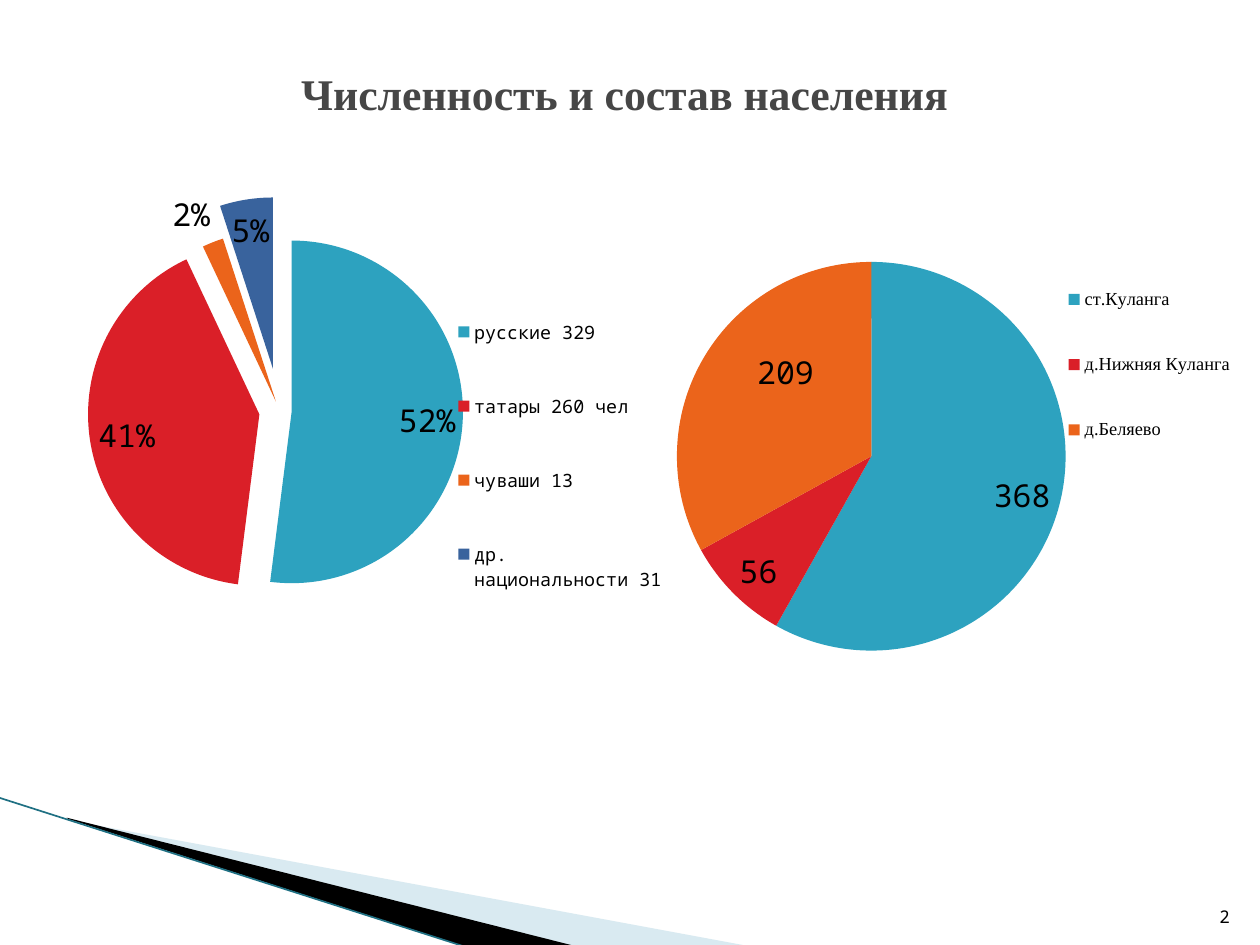
from lxml import etree
from pptx import Presentation
from pptx.chart.data import CategoryChartData
from pptx.dml.color import RGBColor
from pptx.enum.chart import XL_CHART_TYPE, XL_LABEL_POSITION, XL_LEGEND_POSITION
from pptx.enum.shapes import MSO_CONNECTOR
from pptx.enum.text import MSO_ANCHOR, PP_ALIGN
from pptx.oxml.ns import qn
from pptx.util import Inches, Pt

PIE = XL_CHART_TYPE.PIE
RIGHT_LEGEND = XL_LEGEND_POSITION.RIGHT
BEST_FIT = XL_LABEL_POSITION.BEST_FIT
INSIDE, OUTSIDE = XL_LABEL_POSITION.INSIDE_END, XL_LABEL_POSITION.OUTSIDE_END
STRAIGHT = MSO_CONNECTOR.STRAIGHT
MIDDLE, BOTTOM = MSO_ANCHOR.MIDDLE, MSO_ANCHOR.BOTTOM
CENTER, RIGHT = PP_ALIGN.CENTER, PP_ALIGN.RIGHT
MONO, SERIF = "Noto Sans Mono", "Times New Roman"
PALETTE = ["2DA2BF", "DA1F28", "EB641B", "39639D"]


def color(value):
    return RGBColor.from_string(value)


def place(parent, index, **values):
    """Give a chart part a manual layout, as shares of the chart."""
    for old in parent.findall(qn("c:layout")):
        parent.remove(old)
    layout = etree.Element(qn("c:layout"))
    manual = etree.SubElement(layout, qn("c:manualLayout"))
    for tag, value in values.items():
        etree.SubElement(manual, qn("c:" + tag), val=str(value))
    parent.insert(index, layout)


deck = Presentation()
deck.slide_width, deck.slide_height = Inches(10), Inches(7.5)
page = deck.slides.add_slide(deck.slide_layouts[6])

# Corner wedges, in hundredths of an inch
wedges = [
    ("A0CBDC", 40, [(55, 651), (595, 751), (456, 751), (55, 650)]),
    ("000000", 100, [(53, 649), (457, 751), (372, 752), (54, 650)]),
]
for fill, opacity, points in wedges:
    builder = page.shapes.build_freeform(*points[0], scale=Inches(0.01))
    builder.add_line_segments(points[1:], close=True)
    wedge = builder.convert_to_shape()
    wedge.shadow.inherit = False
    wedge.line.fill.background()
    wedge.fill.solid()
    wedge.fill.fore_color.rgb = color(fill)
    if opacity < 100:
        tone = wedge._element.spPr.find(".//" + qn("a:srgbClr"))
        etree.SubElement(tone, qn("a:alpha"), val=str(opacity * 1000))

edge = page.shapes.add_connector(
    STRAIGHT, Inches(-0.01), Inches(6.33), Inches(3.71), Inches(7.52))
edge.line.color.rgb = color("1F7083")
edge.line.width = Pt(0.95)
etree.SubElement(edge._element.spPr, qn("a:effectLst"))

# Title and page number
texts = [
    ("Численность и состав населения ", (0.5, 0.3, 9, 0.87), MIDDLE, CENTER,
     {"size": Pt(25), "name": SERIF, "bold": True}, "464646"),
    ("2", (9.46, 7.01, 0.4, 0.4), BOTTOM, RIGHT,
     {"size": Pt(10), "name": MONO}, "000000"),
]
for words, area, anchor, align, style, ink in texts:
    box = page.shapes.add_textbox(*map(Inches, area))
    frame = box.text_frame
    frame.word_wrap = True
    frame.vertical_anchor = anchor
    para = frame.paragraphs[0]
    para.alignment = align
    span = para.add_run()
    span.text = words
    for key, value in style.items():
        setattr(span.font, key, value)
    span.font.color.rgb = color(ink)

# Pies: nationalities, then villages
pies = [
    {"area": (0.47, 1.48, 5, 3.92), "format": "0%", "legend_font": MONO,
     "rows": {"русские 329": 0.52, "татары 260 чел": 0.41,
              "чуваши 13": 0.02, "др. национальности 31": 0.05},
     "plot": (0.01, 0.01, 0.68, 0.89), "legend": (0.63, 0.17, 0.33, 0.75),
     "explosion": [7, 12, 6, 25], "label": (2, OUTSIDE, None)},
    {"area": (5, 1.48, 5.32, 4.16), "format": "General", "legend_font": SERIF,
     "rows": {"ст.Куланга": 368, "д.Нижняя Куланга": 56, "д.Беляево": 209},
     "plot": (0.07, 0.05, 0.58, 0.93), "legend": (0.64, 0.11, 0.27, 0.46),
     "explosion": [], "label": (2, INSIDE, (0.07, -0.02))},
]
for pie in pies:
    data = CategoryChartData(number_format=pie["format"])
    data.categories = list(pie["rows"])
    data.add_series("Series 1", list(pie["rows"].values()))
    chart = page.shapes.add_chart(PIE, *map(Inches, pie["area"]), data).chart
    chart.has_title = False
    chart.font.size, chart.font.name = Pt(18), MONO
    chart.font.color.rgb = color("000000")

    # Legend and plot area
    chart.has_legend = True
    legend = chart.legend
    legend.position = RIGHT_LEGEND
    legend.include_in_layout = False
    legend.font.size, legend.font.name = Pt(10.5), pie["legend_font"]
    legend.font.color.rgb = color("000000")
    x, y, w, h = pie["legend"]
    place(legend._element, 1, xMode="edge", yMode="edge", x=x, y=y, w=w, h=h)
    x, y, w, h = pie["plot"]
    plot_area = chart._chartSpace.find(".//" + qn("c:plotArea"))
    place(plot_area, 0, layoutTarget="inner", xMode="edge", yMode="edge",
          x=x, y=y, w=w, h=h)

    # Slices, moved outward by their explosion
    plot = chart.plots[0]
    plot.vary_by_categories = True
    series = plot.series[0]
    for index in range(len(pie["rows"])):
        fill = series.points[index].format.fill
        fill.solid()
        fill.fore_color.rgb = color(PALETTE[index])
    slices = series._element.findall(qn("c:dPt"))
    for slice_xml, explosion in zip(slices, pie["explosion"]):
        offset = etree.Element(qn("c:explosion"), val=str(explosion))
        slice_xml.find(qn("c:spPr")).addprevious(offset)
    if pie["explosion"]:
        widest = str(max(pie["explosion"]))
        slices[0].addprevious(etree.Element(qn("c:explosion"), val=widest))

    # Labels, one of them set apart
    labels = series.data_labels
    labels.show_value = True
    labels.number_format = pie["format"]
    labels.number_format_is_linked = False
    labels.position = BEST_FIT
    index, position, shift = pie["label"]
    label = series.points[index].data_label
    label.position = position
    for font in (labels.font, label.font):
        font.size, font.name = Pt(18), MONO
        font.color.rgb = color("000000")
    if shift:
        label_xml = series._element.find(".//" + qn("c:dLbl"))
        place(label_xml, 1, x=shift[0], y=shift[1])

deck.save("out.pptx")
